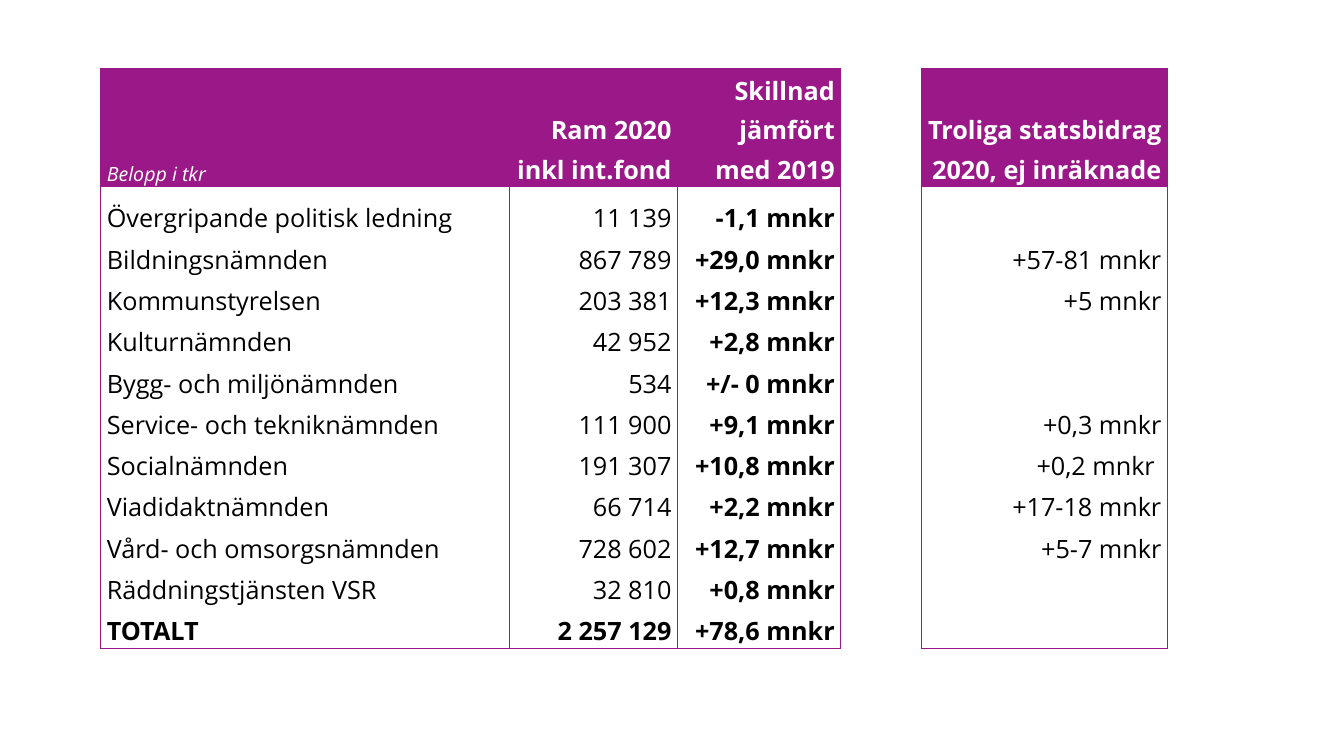
from lxml import etree
from pptx import Presentation
from pptx.dml.color import RGBColor
from pptx.enum.text import MSO_ANCHOR, PP_ALIGN
from pptx.oxml.ns import qn
from pptx.util import Inches, Pt

HEAD = ("Belopp i tkr", "Ram 2020 inkl int.fond", "Skillnad jämfört med 2019",
        "", "Troliga statsbidrag 2020, ej inräknade")
BODY = [
    ("Övergripande politisk ledning", "11 139", "-1,1 mnkr", "", ""),
    ("Bildningsnämnden", "867 789", "+29,0 mnkr", "", "+57-81 mnkr"),
    ("Kommunstyrelsen", "203 381", "+12,3 mnkr", "", "+5 mnkr"),
    ("Kulturnämnden", "42 952", "+2,8 mnkr", "", ""),
    ("Bygg- och miljönämnden", "534", "+/- 0 mnkr", "", ""),
    ("Service- och tekniknämnden", "111 900", "+9,1 mnkr", "", "+0,3 mnkr"),
    ("Socialnämnden", "191 307", "+10,8 mnkr", "", "+0,2 mnkr "),
    ("Viadidaktnämnden", "66 714", "+2,2 mnkr", "", "+17-18 mnkr"),
    ("Vård- och omsorgsnämnden", "728 602", "+12,7 mnkr", "", "+5-7 mnkr"),
    ("Räddningstjänsten VSR", "32 810", "+0,8 mnkr", "", ""),
    ("TOTALT", "2 257 129", "+78,6 mnkr", "", ""),
]
ROWS = [HEAD] + BODY
LAST = len(ROWS) - 1
NAME, DIFF, GAP = 0, 2, 3
COLS = (4.05, 1.67, 1.62, 0.8, 2.44)
HIGH = [1.17, 0.48] + [0.41] * (LAST - 1)
LEFT, TOP = 1, 0.68

PURPLE = RGBColor(0x9B, 0x18, 0x89)
WHITE = RGBColor(0xFF, 0xFF, 0xFF)
BLACK = RGBColor(0, 0, 0)
LOW = MSO_ANCHOR.BOTTOM
START, END = PP_ALIGN.LEFT, PP_ALIGN.RIGHT


def edge(cell, side, shown):
    line = etree.SubElement(cell._tc.get_or_add_tcPr(), qn("a:ln" + side))
    if shown:
        line.set("w", str(Pt(1)))
        fill = etree.SubElement(line, qn("a:solidFill"))
        etree.SubElement(fill, qn("a:srgbClr"), val=str(PURPLE))
    else:
        line.set("w", "0")
        etree.SubElement(line, qn("a:noFill"))


def style(cell, text, row, col):
    head, gap = row == 0, col == GAP
    note = head and col == NAME
    edge(cell, "L", True)
    edge(cell, "R", True)
    edge(cell, "T", head and not gap)
    edge(cell, "B", row == LAST and not gap)
    cell.fill.solid()
    cell.fill.fore_color.rgb = PURPLE if head and not gap else WHITE
    cell.margin_left = cell.margin_right = Inches(0.06)
    cell.margin_top = cell.margin_bottom = 0
    cell.vertical_anchor = LOW
    cell.text = text
    para = cell.text_frame.paragraphs[0]
    para.alignment = START if col == NAME else END
    para.line_spacing = 1.15
    font = para.font
    font.name = "Open Sans"
    font.size = Pt(14 if note else 18)
    font.italic = note
    font.bold = not note and (head or row == LAST or col == DIFF)
    font.color.rgb = WHITE if head else BLACK


def main():
    deck = Presentation()
    deck.slide_width, deck.slide_height = Inches(13.33), Inches(7.5)
    slide = deck.slides.add_slide(deck.slide_layouts[6])
    frame = slide.shapes.add_table(
        len(ROWS), len(COLS), Inches(LEFT), Inches(TOP),
        Inches(sum(COLS)), Inches(sum(HIGH)))
    table = frame.table
    table.first_row = table.horz_banding = False
    for col, wide in zip(table.columns, COLS):
        col.width = Inches(wide)
    for row, high in zip(table.rows, HIGH):
        row.height = Inches(high)
    for r, texts in enumerate(ROWS):
        for c, text in enumerate(texts):
            style(table.cell(r, c), text, r, c)
    deck.save("out.pptx")


if __name__ == "__main__":
    main()
